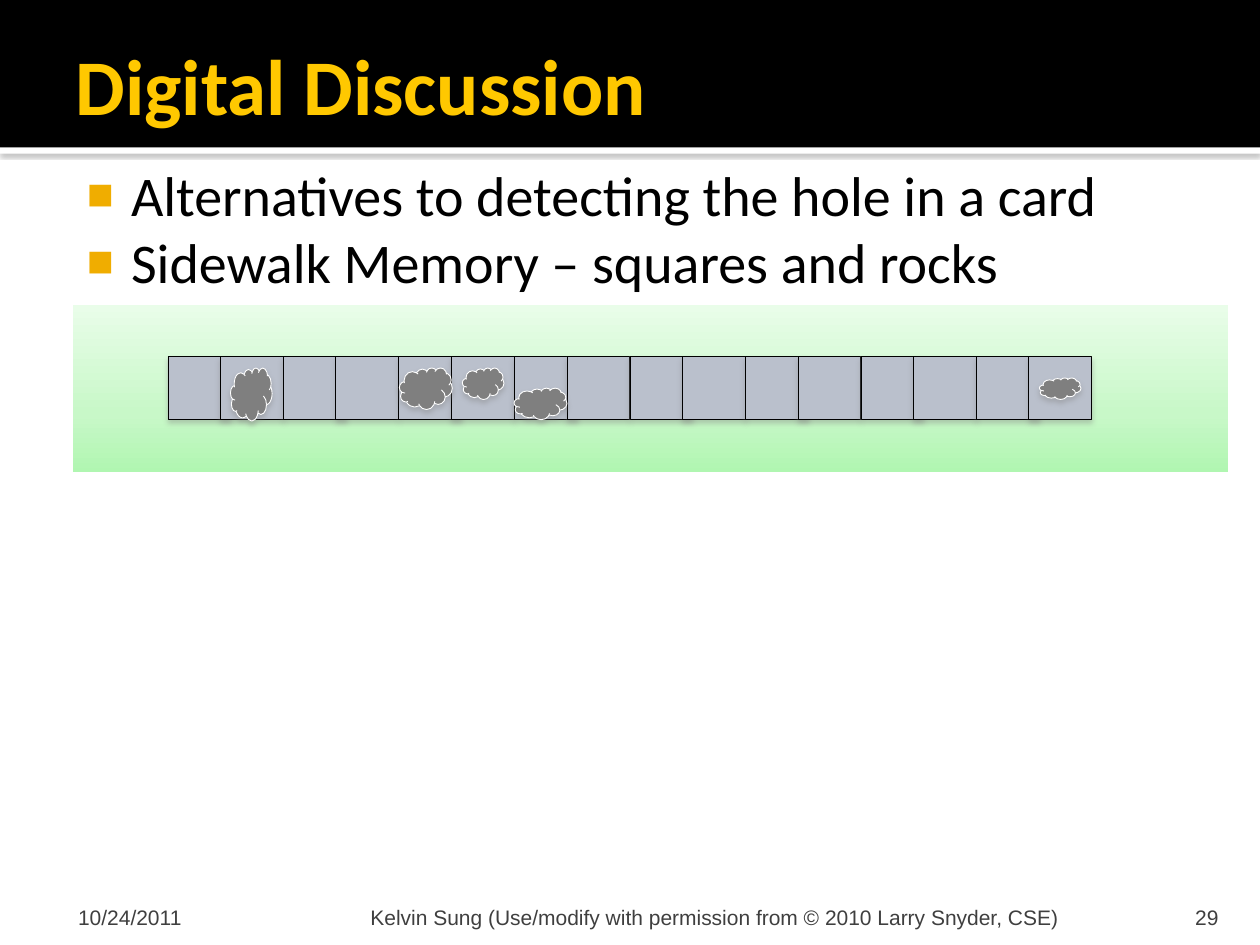
import pptx
import pptx.util
import pptx.oxml
import pptx.oxml.ns
import pptx.dml.color
import pptx.enum.shapes
import pptx.enum.text
from lxml import etree

Inches, Pt = pptx.util.Inches, pptx.util.Pt
SHAPES = pptx.enum.shapes.MSO_SHAPE
ANCHOR, ALIGN = pptx.enum.text.MSO_ANCHOR, pptx.enum.text.PP_ALIGN
qn = pptx.oxml.ns.qn
NAMESPACE = pptx.oxml.ns.nsdecls("a")

COLORS = {
    "white": "FFFFFF", "black": "000000", "title": "FFC800", "bullet": "F0AD00",
    "footer": "3F3F3F", "square": "BAC0CC", "rock": "7F7F7F", "shadow": "808080",
    "grass_bottom": "B0F6B1", "grass_middle": "C8F8C8", "grass_top": "E9FDE9",
}


def add_block(shapes, kind, box, fill=None, line=None, shadow=None):
    """Add a preset shape; shadow is (opacity %, blur pt, distance pt)."""
    shape = shapes.add_shape(kind, *[Inches(value) for value in box])
    shape.shadow.inherit = False
    if fill:
        shape.fill.solid()
        shape.fill.fore_color.rgb = pptx.dml.color.RGBColor.from_string(COLORS[fill])
    if line:
        shape.line.color.rgb = pptx.dml.color.RGBColor.from_string(COLORS[line])
        shape.line.width = Pt(0.5)
    else:
        shape.line.fill.background()
    if shadow:
        opacity, blur, distance = shadow
        shape._element.spPr.find(qn("a:effectLst")).append(pptx.oxml.parse_xml(
            f'<a:outerShdw {NAMESPACE} blurRad="{Pt(blur)}" dist="{Pt(distance)}" '
            f'dir="5400000" rotWithShape="0"><a:srgbClr val="{COLORS["shadow"]}">'
            f'<a:alpha val="{opacity * 1000}"/></a:srgbClr></a:outerShdw>'))
    return shape


def format_text(shape, insets, anchor, font, size, color, bold=False, align=ALIGN.LEFT):
    frame = shape.text_frame
    frame.word_wrap = True
    frame.auto_size = pptx.enum.text.MSO_AUTO_SIZE.NONE
    frame.vertical_anchor = anchor
    (frame.margin_left, frame.margin_top,
     frame.margin_right, frame.margin_bottom) = [Inches(inset) for inset in insets]
    for paragraph in frame.paragraphs:
        paragraph.alignment = align
        paragraph.space_before = Pt(0)
        for run in paragraph.runs:
            run.font.name = font
            run.font.size = Pt(size)
            run.font.bold = bold
            run.font.color.rgb = pptx.dml.color.RGBColor.from_string(COLORS[color])


presentation = pptx.Presentation()
presentation.slide_width, presentation.slide_height = Inches(10), Inches(7.5)
slide = presentation.slides.add_slide(presentation.slide_layouts[1])

# Header band and the white strip under it, behind the placeholders
strip = add_block(slide.shapes, SHAPES.RECTANGLE, (0, 1.17, 10, 0.05), "white",
                  shadow=(60, 2.5, 0.8))
band = add_block(slide.shapes, SHAPES.RECTANGLE, (0, 0, 10, 1.17), "black")
for position, shape in enumerate((strip, band), start=2):
    slide.shapes._spTree.insert(position, shape._element)

# Title
title = slide.shapes.title
title.left, title.top, title.width, title.height = map(Inches, (0.5, 0.17, 9, 1))
title.text_frame.text = "Digital Discussion"
format_text(title, (0.1, 0.05, 0.05, 0.05), ANCHOR.MIDDLE, "Calibri", 45, "title", bold=True)

# Bulleted list
body = slide.placeholders[1]
body.left, body.top, body.width, body.height = map(Inches, (0.5, 1.17, 9, 5.83))
body.text_frame.text = ("Alternatives to detecting the hole in a card\n"
                        "Sidewalk Memory – squares and rocks")
format_text(body, (0.06, 0.1, 0.1, 0.05), ANCHOR.TOP, "Calibri", 32, "black")
for paragraph in body.text_frame.paragraphs:
    properties = paragraph._p.get_or_add_pPr()
    properties.set("marL", str(Inches(0.48)))
    properties.set("indent", str(Inches(-0.35)))
    bullet_color = etree.SubElement(properties, qn("a:buClr"))
    etree.SubElement(bullet_color, qn("a:srgbClr"), val=COLORS["bullet"])
    etree.SubElement(properties, qn("a:buSzPct"), val="80000")
    etree.SubElement(properties, qn("a:buFont"), typeface="Arial")
    etree.SubElement(properties, qn("a:buChar"), char="■")

# Footer: date, credit, slide number
footers = [
    ("10/24/2011", 0.5, 2.33, (0.12, 0.05, 0.05, 0), ALIGN.LEFT),
    ("Kelvin Sung (Use/modify with permission from © 2010 Larry Snyder, CSE)",
     2.89, 6.02, (0.05, 0.05, 0.05, 0), ALIGN.LEFT),
    ("29", 8.97, 0.8, (0.1, 0.05, 0.1, 0), ALIGN.RIGHT),
]
for text, left, width, insets, align in footers:
    footer = slide.shapes.add_textbox(Inches(left), Inches(7.08), Inches(width), Inches(0.3))
    footer.text_frame.text = text
    format_text(footer, insets, ANCHOR.BOTTOM, "Arial", 12, "footer", align=align)

# Grass with a vertical gradient
sidewalk = slide.shapes.add_group_shape()
grass = add_block(sidewalk.shapes, SHAPES.RECTANGLE, (0.58, 2.42, 9.17, 1.33))
stops = "".join(
    f'<a:gs pos="{percent * 1000}"><a:srgbClr val="{COLORS[name]}"/></a:gs>'
    for percent, name in ((0, "grass_bottom"), (35, "grass_middle"), (100, "grass_top")))
grass._element.spPr.find(qn("a:prstGeom")).addnext(pptx.oxml.parse_xml(
    f'<a:gradFill {NAMESPACE} rotWithShape="1"><a:gsLst>{stops}</a:gsLst>'
    '<a:lin ang="16200000" scaled="0"/></a:gradFill>'))

# Sidewalk squares: pairs 11/12 inch apart, the second 5/12 inch after the first
soft_shadow = (38, 3.1, 2)
for index in range(16):
    pair, second = divmod(index, 2)
    left = 4 / 3 + pair * 11 / 12 + second * 5 / 12
    add_block(sidewalk.shapes, SHAPES.RECTANGLE, (left, 2.83, 0.5, 0.5),
              "square", "black", soft_shadow)

# Rocks
rocks = [(1.83, 2.92, 0.33, 0.42), (3.17, 2.92, 0.42, 0.33), (3.67, 2.92, 0.33, 0.25),
         (8.25, 3, 0.33, 0.17), (4.08, 3.08, 0.42, 0.25)]
for box in rocks:
    add_block(sidewalk.shapes, SHAPES.CLOUD, box, "rock", "white", soft_shadow)

presentation.save("out.pptx")
